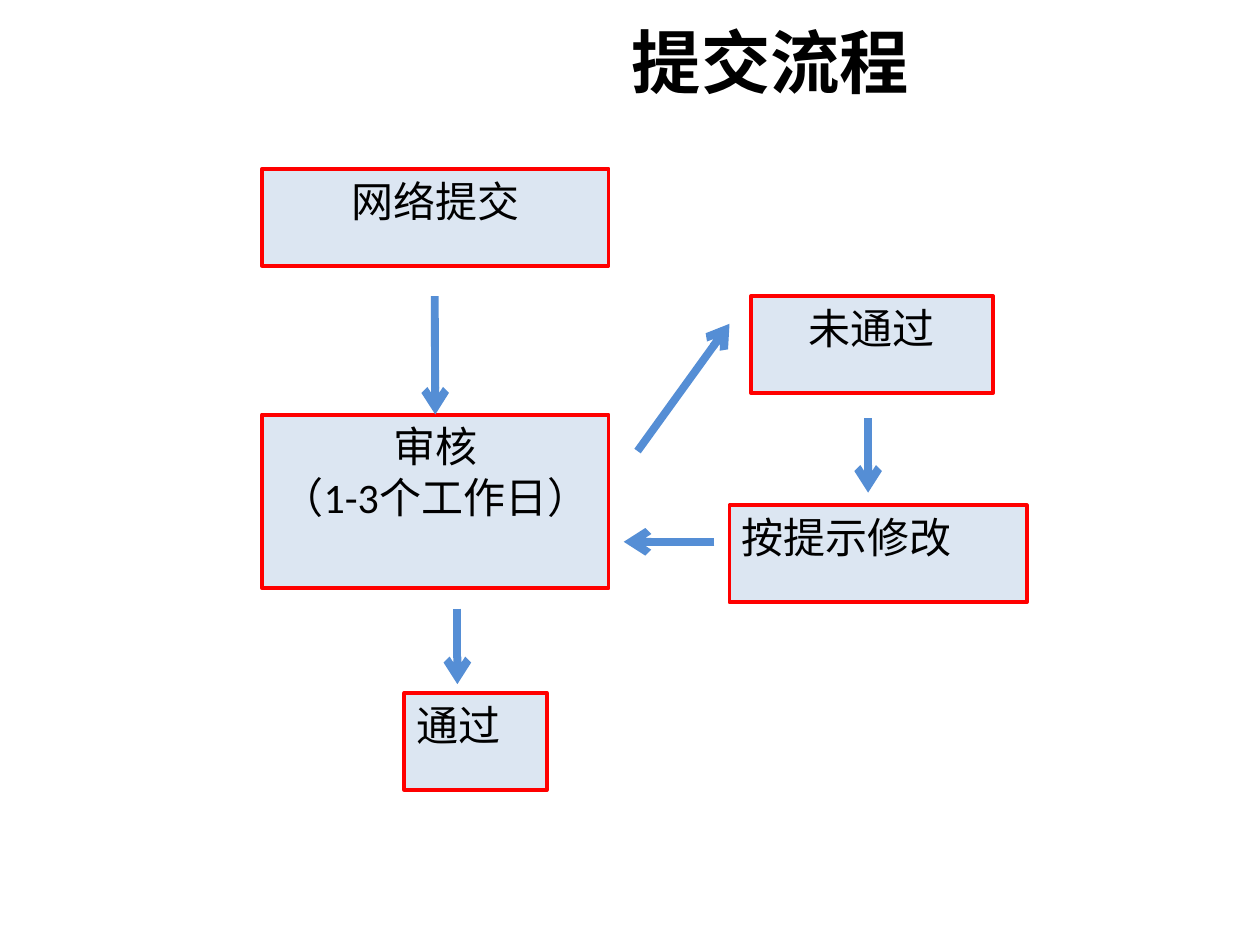
from lxml import etree
from pptx import Presentation
from pptx.dml.color import RGBColor
from pptx.enum.shapes import MSO_CONNECTOR, MSO_SHAPE
from pptx.enum.text import MSO_ANCHOR, MSO_AUTO_SIZE, PP_ALIGN
from pptx.oxml.ns import qn
from pptx.util import Inches, Pt

BLACK = RGBColor(0x00, 0x00, 0x00)
RED = RGBColor(0xFF, 0x00, 0x00)
PALE_BLUE = RGBColor(0xDC, 0xE6, 0xF2)
ARROW_BLUE = RGBColor(0x55, 0x8E, 0xD5)
CHINESE_FONT = "Noto Sans CJK SC"
CENTER, LEFT = PP_ALIGN.CENTER, PP_ALIGN.LEFT

TITLE = "提交流程"
TITLE_BOX = (2.81, 0.16, 6.61, 0.64)
TITLE_FORMAT = {"name": CHINESE_FONT, "size": Pt(39.6), "bold": True}
STEP_FORMAT = {"name": "Calibri", "size": Pt(24), "bold": False}

STEPS = {
    "submit": (["网络提交"], (2.08, 1.34, 2.75, 0.77), CENTER),
    "review": (["审核", "（1-3个工作日）"], (2.08, 3.29, 2.75, 1.38), CENTER),
    "passed": (["通过"], (3.21, 5.5, 1.13, 0.77), LEFT),
    "rejected": (["未通过"], (5.96, 2.35, 1.92, 0.77), CENTER),
    "revise": (["按提示修改"], (5.79, 4.01, 2.36, 0.77), LEFT),
}
ARROWS = [
    ((3.45, 2.35), (3.45, 3.29), ("review", 0)),
    ((3.63, 4.83), (3.63, 5.43), None),
    ((5.06, 3.58), (5.79, 2.57), None),
    ((6.89, 3.32), (6.89, 3.91), None),
    ((5.67, 4.3), (4.95, 4.3), None),
]


def inches(values):
    return [Inches(value) for value in values]


def write_text(frame, lines, alignment, anchor, font_format):
    frame.text = "\n".join(lines)
    frame.word_wrap = True
    frame.auto_size = MSO_AUTO_SIZE.NONE
    frame.vertical_anchor = anchor
    for paragraph in frame.paragraphs:
        paragraph.alignment = alignment
        for run in paragraph.runs:
            run.font.color.rgb = BLACK
            for name, value in font_format.items():
                setattr(run.font, name, value)
            east_asian = etree.SubElement(run.font._element, qn("a:ea"))
            east_asian.set("typeface", CHINESE_FONT)


def add_step(slide, lines, box, alignment):
    shape = slide.shapes.add_shape(MSO_SHAPE.RECTANGLE, *inches(box))
    shape.shadow.inherit = False
    shape.fill.solid()
    shape.fill.fore_color.rgb = PALE_BLUE
    shape.line.color.rgb = RED
    shape.line.width = Pt(2.25)
    write_text(shape.text_frame, lines, alignment, MSO_ANCHOR.TOP, STEP_FORMAT)
    return shape


def add_arrow(slide, start, end):
    arrow = slide.shapes.add_connector(MSO_CONNECTOR.STRAIGHT, *inches(start + end))
    arrow.line.color.rgb = ARROW_BLUE
    arrow.line.width = Pt(4.5)
    etree.SubElement(arrow.line._get_or_add_ln(), qn("a:tailEnd")).set("type", "arrow")
    etree.SubElement(arrow._element.spPr, qn("a:effectLst"))
    return arrow


def main():
    presentation = Presentation()
    presentation.slide_width, presentation.slide_height = inches((10, 7.5))
    slide = presentation.slides.add_slide(presentation.slide_layouts[5])

    title = slide.shapes.title
    title.left, title.top, title.width, title.height = inches(TITLE_BOX)
    write_text(title.text_frame, [TITLE], CENTER, MSO_ANCHOR.MIDDLE, TITLE_FORMAT)

    steps = {name: add_step(slide, *step) for name, step in STEPS.items()}
    for start, end, target in ARROWS:
        arrow = add_arrow(slide, start, end)
        if target:
            name, side = target
            arrow.end_connect(steps[name], side)

    presentation.save("out.pptx")


if __name__ == "__main__":
    main()
